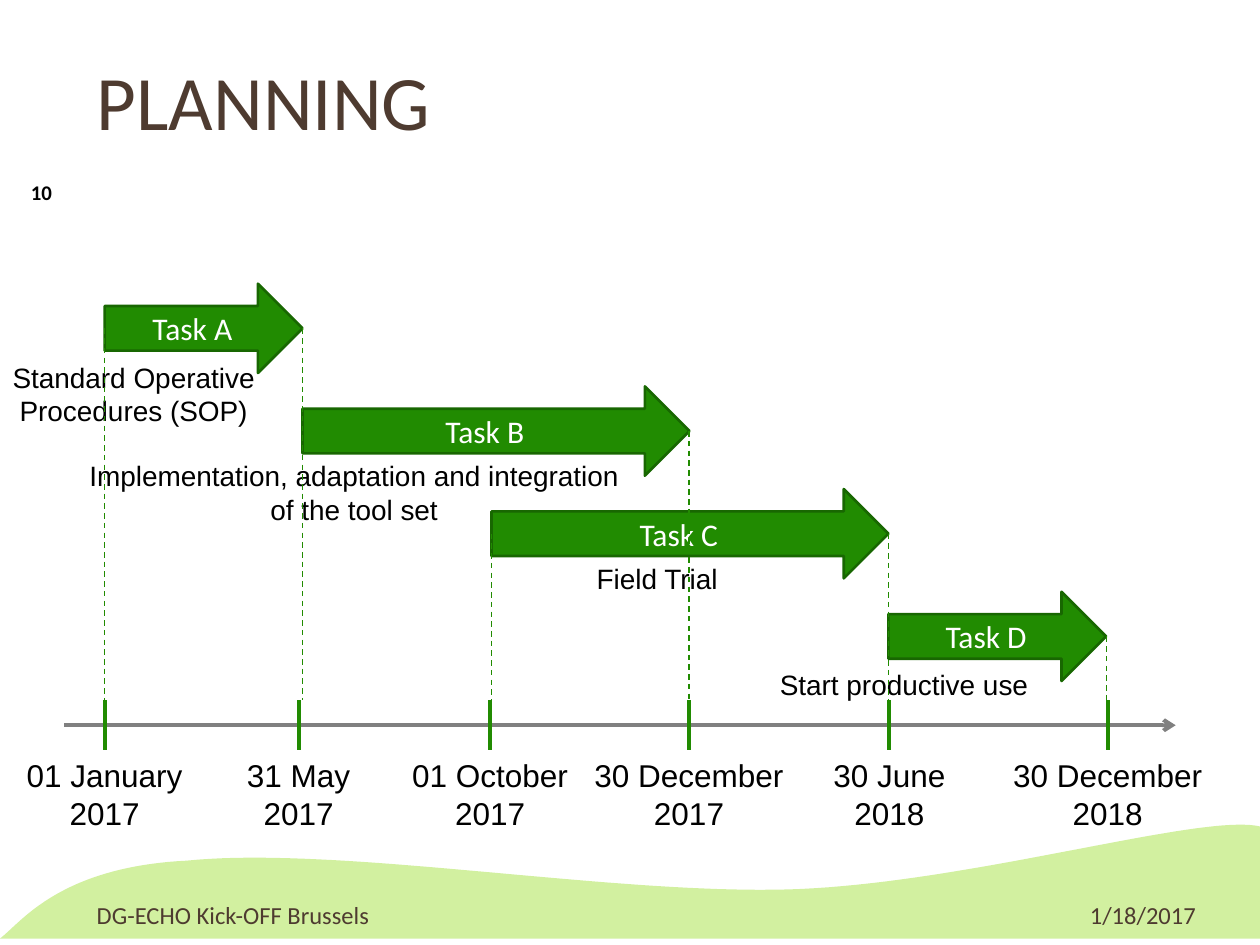
from pptx import Presentation, util as u
from pptx.dml.color import RGBColor
from pptx.enum import dml, shapes, text
from pptx.oxml import parse_xml
from pptx.oxml.ns import nsdecls, qn

GREEN = RGBColor(0x21, 0x8B, 0x01)
DARK_GREEN = RGBColor(0x18, 0x67, 0x01)
PALE_GREEN = RGBColor(0xD2, 0xF0, 0xA0)
BROWN = RGBColor(0x4E, 0x3B, 0x30)
GRAY = RGBColor(0x80, 0x80, 0x80)
BLACK = RGBColor(0, 0, 0)
WHITE = RGBColor(0xFF, 0xFF, 0xFF)

LEFT, CENTER, RIGHT = text.PP_ALIGN.LEFT, text.PP_ALIGN.CENTER, text.PP_ALIGN.RIGHT
ARROW_HEIGHT = 1.8
ROW_STEP = 2.07

MILESTONES = [
    (1.6, 3.69, "01 January\n2017"),
    (5.51, 2.62, "31 May\n2017"),
    (9.37, 3.69, "01 October\n2017"),
    (13.38, 4.37, "30 December\n2017"),
    (17.42, 2.79, "30 June\n2018"),
    (21.82, 4.37, "30 December\n2018"),
]
TASKS = [("Task A", 0, 3.99), ("Task B", 3.99, 7.8),
         ("Task C", 7.8, 8), ("Task D", 15.8, 4.39)]
DESCRIPTIONS = [
    ("Standard Operative Procedures (SOP)", -2.21, 1.42, 5.59, 1.62),
    ("Implementation, adaptation and integration of the tool set", -0.61, 3.4, 11.28, 1.62),
    ("Field Trial", 7.8, 5.48, 6.68, 0.94),
    ("Start productive use", 12.98, 7.62, 6.27, 0.94),
]
GUIDES = [(0, 0, 8.61), (3.99, 0, 8.4), (11.78, 1, 8.71),
          (7.8, 2, 9.01), (15.8, 2, 9.01), (20.19, 3, 8.81)]


def write(shape, words, size, font, color, align, bold=False):
    """Fill a shape with evenly formatted paragraphs."""
    shape.text_frame.text = words
    for paragraph in shape.text_frame.paragraphs:
        paragraph.alignment = align
        paragraph.font.size = u.Pt(size)
        paragraph.font.name = font
        paragraph.font.color.rgb = color
        paragraph.font.bold = bold


def add_label(slide, words, box, size, font="Arial", color=BLACK, align=CENTER,
              bold=False, wrap=True, middle=False):
    """Add a text box in a (left, top, width, height) box."""
    label = slide.shapes.add_textbox(*map(u.Cm, box))
    frame = label.text_frame
    frame.word_wrap = wrap
    if middle:
        frame.vertical_anchor = text.MSO_ANCHOR.MIDDLE
    else:
        frame.auto_size = text.MSO_AUTO_SIZE.SHAPE_TO_FIT_TEXT
    write(label, words, size, font, color, align, bold)


def add_line(slide, start, end, color, width):
    """Add a straight line without a shadow."""
    line = slide.shapes.add_connector(
        shapes.MSO_CONNECTOR.STRAIGHT, *map(u.Cm, start + end))
    line.line.color.rgb = color
    line.line.width = u.Pt(width)
    line._element.spPr.append(parse_xml(f"<a:effectLst {nsdecls('a')}/>"))
    return line


def bezier(points, steps=40):
    """Return points along a cubic curve, without its start."""
    curve = []
    for step in range(1, steps + 1):
        t = step / steps
        weights = ((1 - t) ** 3, 3 * t * (1 - t) ** 2, 3 * t * t * (1 - t), t ** 3)
        curve.append(tuple(sum(w * p[axis] for w, p in zip(weights, points))
                           for axis in (0, 1)))
    return curve


def add_wave(slide, left, top, width, height):
    """Draw the pale wave behind everything else."""
    start, crest, end = (3.76, 0.97), (15.88, 1.55), (width, 0.28)
    corner = (0, height)
    outline = (bezier([start, (6.81, 0.66), (12.27, 1.65), crest])
               + bezier([crest, (19.48, 1.45), (24.21, 0), end])
               + [(width, height), corner]
               + bezier([corner, (0.41, 2.24), (1.17, 1.1), start]))
    builder = slide.shapes.build_freeform(
        u.Cm(left + start[0]), u.Cm(top + start[1]))
    builder.add_line_segments([(u.Cm(left + x), u.Cm(top + y)) for x, y in outline])
    wave = builder.convert_to_shape()
    wave.shadow.inherit = False
    wave.fill.solid()
    wave.fill.fore_color.rgb = PALE_GREEN
    wave.line.fill.background()
    slide.shapes._spTree.insert(2, wave._element)


def add_title(slide, left, top, width, height):
    """Place and format the title placeholder."""
    title = slide.shapes.title
    title.left, title.top, title.width, title.height = map(
        u.Cm, (left, top, width, height))
    title.text_frame.vertical_anchor = text.MSO_ANCHOR.MIDDLE
    write(title, "PLANNING", 44, "Calibri", BROWN, LEFT)


def add_timeline(slide, left, top, width, height):
    """Draw the time axis with its ticks and dates."""
    axis_y = top + height / 2
    axis = add_line(slide, (left, axis_y), (left + width, axis_y), GRAY, 2.25)
    axis.line._get_or_add_ln().append(
        parse_xml(f'<a:tailEnd {nsdecls("a")} type="arrow"/>'))
    for offset, label_width, date in MILESTONES:
        x = left + offset - 0.79
        add_line(slide, (x, top), (x, top + height), GREEN, 2.25)
        add_label(slide, date, (x - label_width / 2, top + height, label_width, 1.8),
                  18, wrap=False)


def add_tasks(slide, left, top):
    """Draw the staggered task arrows, their descriptions and date guides."""
    for row, (name, offset, width) in enumerate(TASKS):
        arrow = slide.shapes.add_shape(
            shapes.MSO_SHAPE.RIGHT_ARROW, u.Cm(left + offset),
            u.Cm(top + row * ROW_STEP), u.Cm(width), u.Cm(ARROW_HEIGHT))
        arrow.shadow.inherit = False
        arrow.fill.solid()
        arrow.fill.fore_color.rgb = GREEN
        arrow.line.color.rgb = DARK_GREEN
        arrow.line.width = u.Pt(1.5)
        arrow.text_frame.vertical_anchor = text.MSO_ANCHOR.MIDDLE
        write(arrow, name, 18, "Calibri", WHITE, CENTER)
    for words, x, y, width, height in DESCRIPTIONS:
        add_label(slide, words, (left + x, top + y, width, height), 16)
    for x, row, end in GUIDES:
        start = top + row * ROW_STEP + ARROW_HEIGHT / 2
        guide = add_line(slide, (left + x, start), (left + x, top + end), GREEN, 0.79)
        guide.line.dash_style = dml.MSO_LINE.DASH


def add_footer(slide, left, top, width, height):
    """Write the event name and the date on the wave."""
    style = dict(size=14, font="Calibri", color=BROWN, middle=True)
    date_width = 7.42
    add_label(slide, "1/18/2017",
              (left + width - date_width, top, date_width, height), align=RIGHT, **style)
    add_label(slide, "DG-ECHO Kick-OFF Brussels",
              (left, top, 15.06, height), align=LEFT, **style)


def main():
    """Build and save the planning slide."""
    presentation = Presentation()
    presentation.slide_width, presentation.slide_height = u.Cm(25.4), u.Cm(19.05)
    slide = presentation.slides.add_slide(presentation.slide_layouts[5])
    add_wave(slide, 0, 16.38, 25.4, 2.54)
    add_title(slide, 1.7, 0.64, 22.66, 2.74)
    add_timeline(slide, 1.3, 14.12, 22.4, 1)
    add_tasks(slide, 2.11, 5.72)
    add_footer(slide, 1.7, 17.93, 22.66, 1.02)
    add_label(slide, "10", (0.1, 3.53, 1.47, 0.69), 11.9, "Calibri",
              bold=True, middle=True)
    presentation.save("out.pptx")


if __name__ == "__main__":
    main()
